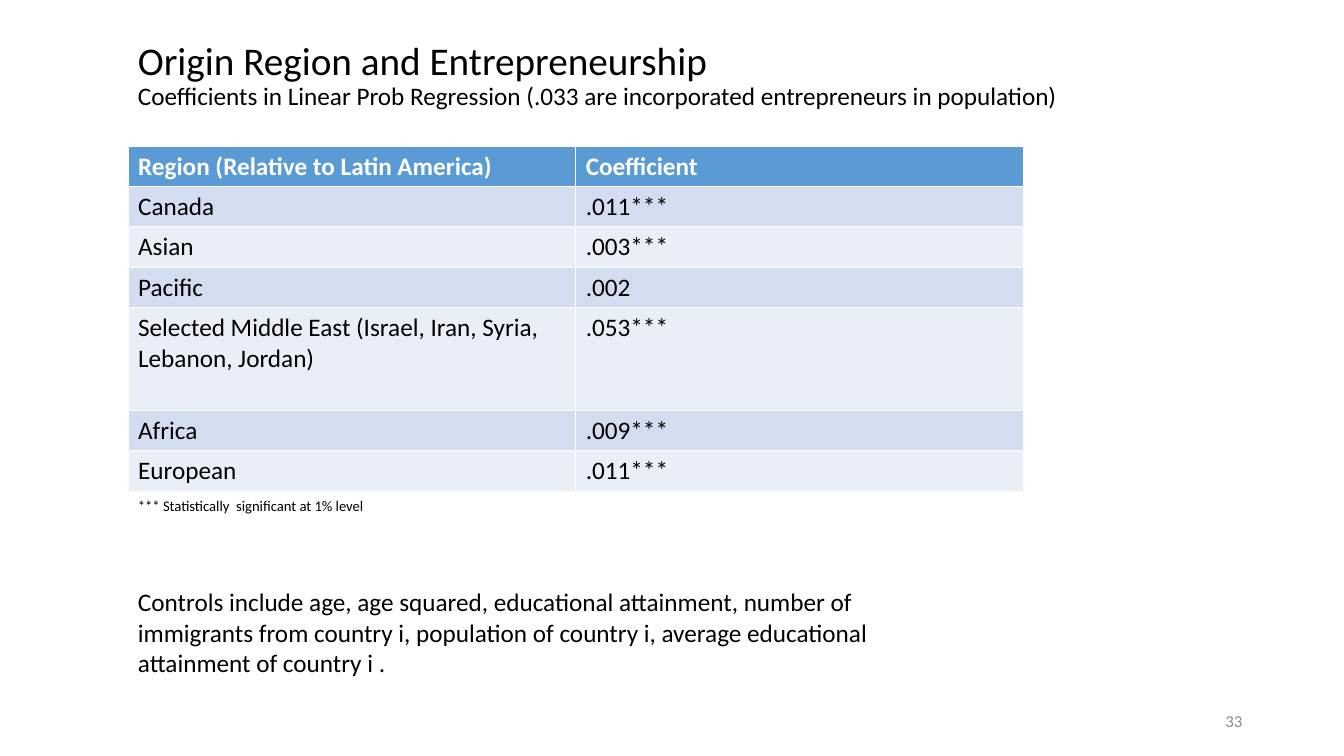
from pptx import Presentation
from pptx.dml.color import RGBColor
from pptx.enum.text import MSO_ANCHOR, PP_ALIGN
from pptx.util import Inches, Pt

BLACK = RGBColor(0x00, 0x00, 0x00)
WHITE = RGBColor(0xFF, 0xFF, 0xFF)
GRAY = RGBColor(0x8C, 0x8C, 0x8C)
BLUE = RGBColor(0x5B, 0x9B, 0xD5)
BANDS = [RGBColor(0xEA, 0xEF, 0xF7), RGBColor(0xD2, 0xDE, 0xEF)]
LEFT = 1.27


def add_run(para, text, size=18, color=BLACK, bold=False):
    run = para.add_run()
    run.text = text
    look = {"name": "Calibri", "size": Pt(size), "bold": bold}
    for key, value in look.items():
        setattr(run.font, key, value)
    run.font.color.rgb = color


def add_box(spot, anchor=MSO_ANCHOR.TOP):
    """Add a wrapping text box and return its first paragraph."""
    frame = slide.shapes.add_textbox(*map(Inches, spot)).text_frame
    frame.word_wrap = True
    frame.vertical_anchor = anchor
    return frame.paragraphs[0]


deck = Presentation()
deck.slide_width, deck.slide_height = Inches(13.33), Inches(7.5)
slide = deck.slides.add_slide(deck.slide_layouts[6])

# Title and subtitle
title = add_box((LEFT, 0.03, 11.5, 1.45), MSO_ANCHOR.MIDDLE)
title.line_spacing = 0.9
add_run(title, "Origin Region and Entrepreneurship", 28)
title.add_line_break()
add_run(title, "Coefficients in Linear Prob Regression "
        "(.033 are incorporated entrepreneurs in population)")

# Coefficient table
rows = [
    ("Region (Relative to Latin America)", "Coefficient"),
    ("Canada", ".011***"),
    ("Asian", ".003***"),
    ("Pacific", ".002"),
    ("Selected Middle East (Israel, Iran, Syria, Lebanon, Jordan)", ".053***"),
    ("Africa", ".009***"),
    ("European", ".011***"),
]
TALL = 4
table = slide.shapes.add_table(len(rows), 2, Inches(LEFT), Inches(1.45),
                               Inches(8.88), Inches(3.43)).table
for r, row in enumerate(rows):
    table.rows[r].height = Inches(1.02 if r == TALL else 0.4)
    head = r == 0
    for c, text in enumerate(row):
        cell = table.cell(r, c)
        cell.fill.solid()
        cell.fill.fore_color.rgb = BLUE if head else BANDS[r % 2]
        add_run(cell.text_frame.paragraphs[0], text,
                color=WHITE if head else BLACK, bold=head)

# Notes below the table and page number
add_run(add_box((LEFT, 4.88, 7.13, 0.29)),
        "*** Statistically  significant at 1% level", 10.5)
add_run(add_box((LEFT, 5.77, 7.72, 1.01)),
        "Controls include age, age squared, educational attainment, number of "
        "immigrants from country i, population of country i, average "
        "educational attainment of country i .")
page = add_box((9.42, 6.95, 3, 0.4), MSO_ANCHOR.MIDDLE)
page.alignment = PP_ALIGN.RIGHT
add_run(page, "33", 12, GRAY)

deck.save("out.pptx")
